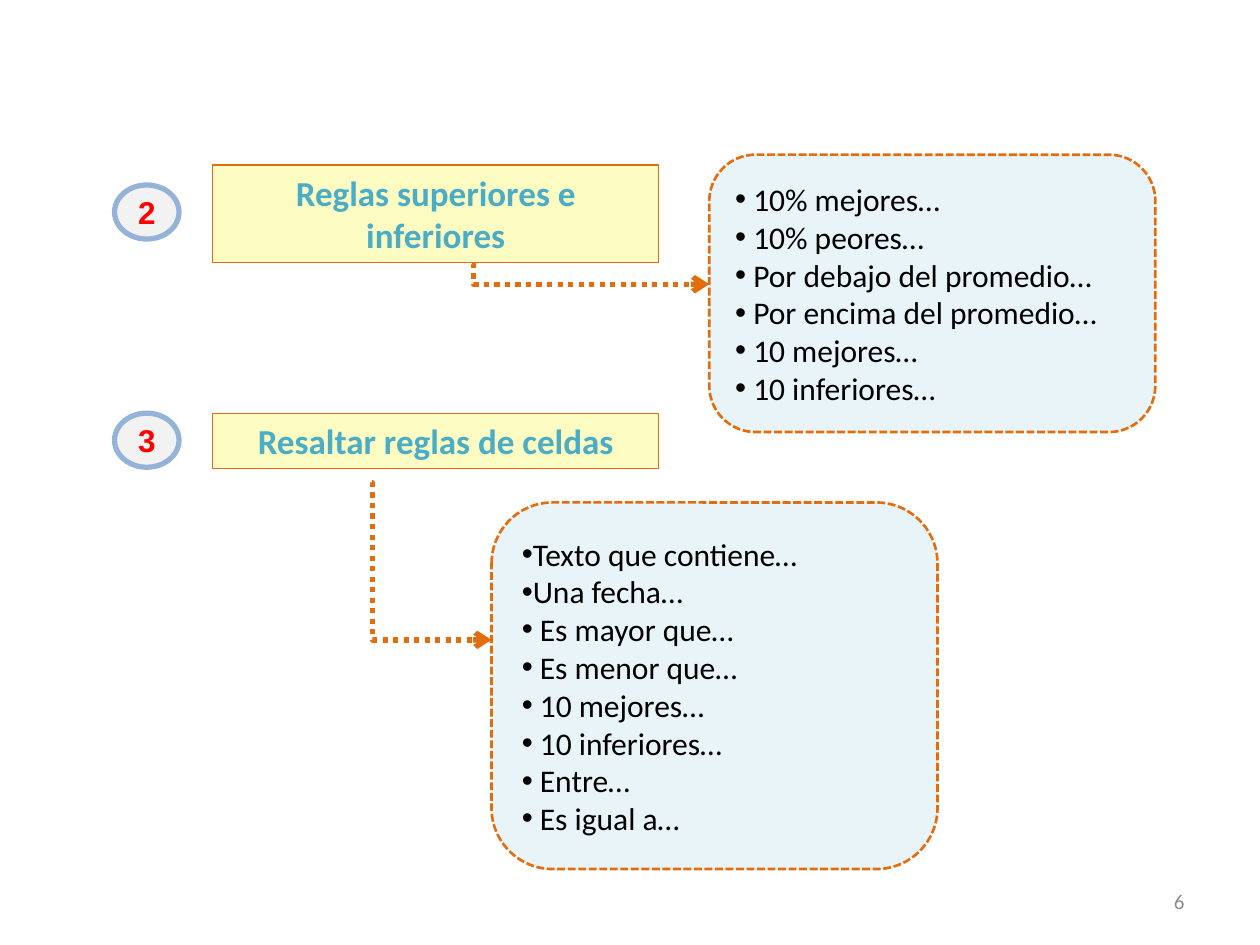
from lxml.etree import SubElement
from pptx import Presentation
from pptx.dml.color import RGBColor
from pptx.enum.dml import MSO_LINE as Dash
from pptx.enum.shapes import MSO_CONNECTOR as Connector, MSO_SHAPE as Shape
from pptx.enum.text import MSO_ANCHOR as Anchor, PP_ALIGN as Align
from pptx.oxml.ns import qn
from pptx.util import Cm, Pt


def color(value):
    return RGBColor.from_string(value)


def add_box(kind, left, top, width, height, fill, border, weight, lines, align, font, size, ink, bold=False):
    box = slide.shapes.add_shape(kind, Cm(left), Cm(top), Cm(width), Cm(height))
    box.shadow.inherit = False
    box.fill.solid()
    box.fill.fore_color.rgb = color(fill)
    box.line.color.rgb = color(border)
    box.line.width = Pt(weight)
    frame = box.text_frame
    frame.word_wrap = True
    frame.vertical_anchor = Anchor.MIDDLE
    for index, line in enumerate(lines):
        paragraph = frame.paragraphs[0] if index == 0 else frame.add_paragraph()
        paragraph.alignment = align
        run = paragraph.add_run()
        run.text = line
        run.font.name = font
        run.font.size = Pt(size)
        run.font.bold = bold
        run.font.color.rgb = color(ink)
    return box


deck = Presentation()
deck.slide_width, deck.slide_height = Cm(25.4), Cm(19.05)
slide = deck.slides.add_slide(deck.slide_layouts[6])

ORANGE = "E46C0A"
rules = [
    ("2", 3.73, "Reglas superiores e inferiores", 3.33, 1.96, (14.3, 3.12, 5.59),
     [" 10% mejores…", " 10% peores…", " Por debajo del promedio…",
      " Por encima del promedio…", " 10 mejores…", " 10 inferiores…"],
     (9.52, 5.33, 5.73)),
    ("3", 8.33, "Resaltar reglas de celdas", 8.33, 1.12, (9.91, 10.13, 7.39),
     ["Texto que contiene…", "Una fecha…", " Es mayor que…", " Es menor que…",
      " 10 mejores…", " 10 inferiores…", " Entre…", " Es igual a…"],
     (7.49, 9.73, 12.9)),
]

for number, number_top, title, title_top, title_height, panel, options, route in rules:
    badge = add_box(Shape.OVAL, 2.31, number_top, 1.3, 1.09, "F2F2F2", "95B3D7", 3,
                    [number], Align.CENTER, "Arial", 18, "FF0000", True)
    frame = badge.text_frame
    frame.margin_left = frame.margin_right = frame.margin_top = frame.margin_bottom = 0

    add_box(Shape.RECTANGLE, 4.29, title_top, 8.99, title_height, "FCFBC1", ORANGE, 0.75,
            [title], Align.CENTER, "Calibri", 20, "4BACC6", True)

    panel_left, panel_top, panel_height = panel
    option_panel = add_box(Shape.ROUNDED_RECTANGLE, panel_left, panel_top, 8.99, panel_height,
                           "E8F4F8", ORANGE, 1.5, options, Align.LEFT, "Calibri", 18, "000000")
    option_panel.line.dash_style = Dash.SQUARE_DOT
    option_panel.line._get_or_add_ln().find(qn("a:prstDash")).set("val", "sysDash")
    for paragraph in option_panel.text_frame.paragraphs:
        properties = paragraph._p.get_or_add_pPr()
        SubElement(properties, qn("a:buFont"), typeface="Arial")
        SubElement(properties, qn("a:buChar"), char="•")

    start_x, start_y, end_y = route
    arrow = slide.shapes.add_connector(Connector.ELBOW, Cm(start_x), Cm(start_y), Cm(panel_left), Cm(end_y))
    arrow.line.color.rgb = color(ORANGE)
    arrow.line.width = Pt(3)
    arrow.line.dash_style = Dash.ROUND_DOT
    outline = arrow.line._get_or_add_ln()
    outline.find(qn("a:prstDash")).set("val", "sysDot")
    SubElement(outline, qn("a:tailEnd"), type="arrow")
    geometry = arrow._element.spPr.find(qn("a:prstGeom"))
    SubElement(geometry.find(qn("a:avLst")), qn("a:gd"), name="adj1", fmla="val 600")
    SubElement(arrow._element.spPr, qn("a:effectLst"))

page_box = slide.shapes.add_textbox(Cm(18.21), Cm(17.65), Cm(5.92), Cm(1.02))
page_box.text_frame.word_wrap = True
page_box.text_frame.vertical_anchor = Anchor.MIDDLE
page_line = page_box.text_frame.paragraphs[0]
page_line.alignment = Align.RIGHT
page_run = page_line.add_run()
page_run.text = "6"
page_run.font.name = "Calibri"
page_run.font.size = Pt(12)
page_run.font.color.rgb = color("8C8C8C")

deck.save("out.pptx")
